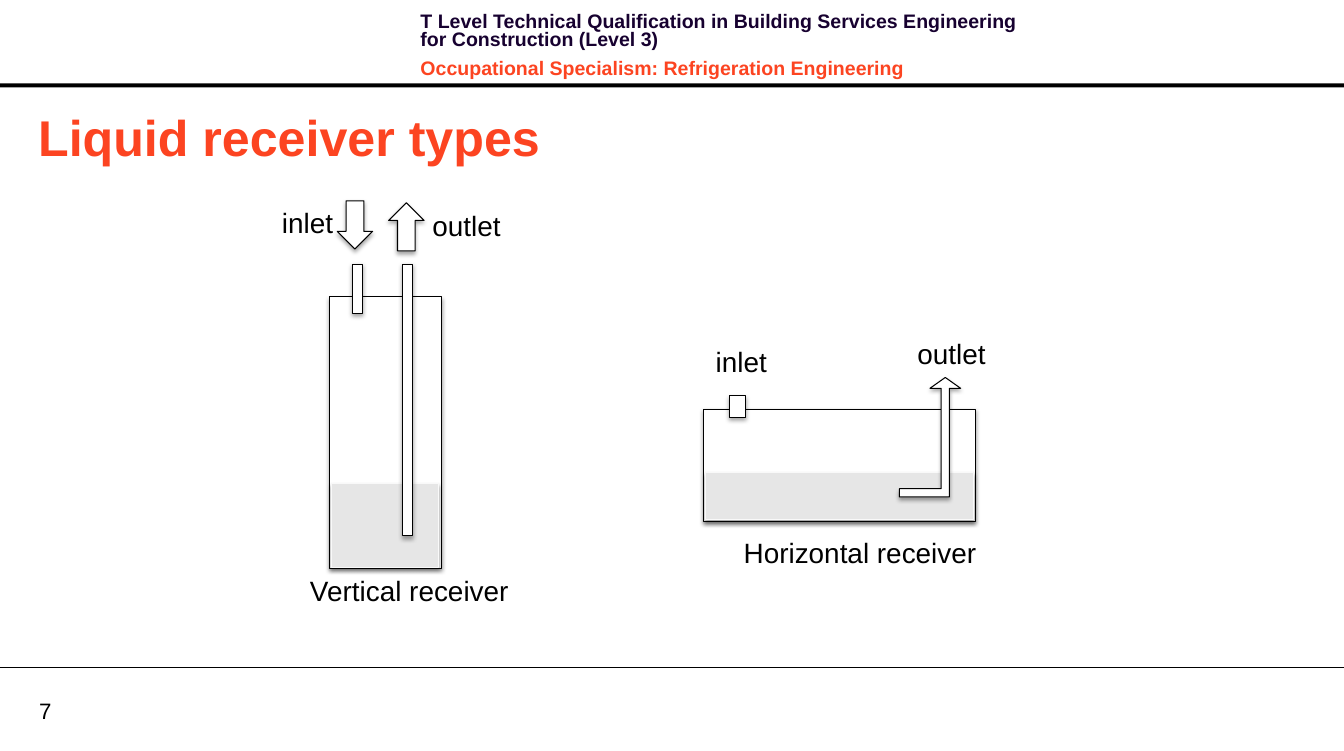
from dataclasses import dataclass

from lxml import etree
from pptx import Presentation
from pptx.dml.color import RGBColor
from pptx.enum.shapes import MSO_CONNECTOR, MSO_SHAPE
from pptx.enum.text import MSO_ANCHOR, PP_ALIGN
from pptx.oxml.ns import qn
from pptx.util import Pt

RECTANGLE = MSO_SHAPE.RECTANGLE
DOWN_ARROW = MSO_SHAPE.DOWN_ARROW
UP_ARROW = MSO_SHAPE.UP_ARROW
BENT_UP_ARROW = MSO_SHAPE.BENT_UP_ARROW
STRAIGHT = MSO_CONNECTOR.STRAIGHT
MIDDLE = MSO_ANCHOR.MIDDLE
LEFT = PP_ALIGN.LEFT

FONT = "Arial"
BLACK, WHITE = "000000", "FFFFFF"
NAVY, ORANGE = "170130", "FC4421"
LIQUID, LIQUID_EDGE = "E6E6E6", "F9F9F9"
PAGE_WIDTH, PAGE_HEIGHT = 964, 538.6


@dataclass
class Part:
    left: float
    top: float
    width: float
    height: float
    kind: int = RECTANGLE
    fill: str = WHITE
    edge: str = BLACK
    adjustments: tuple = ()


@dataclass
class Label:
    text: str
    left: float
    top: float
    width: float


VERTICAL_RECEIVER = [
    Part(236.2, 212.6, 80.6, 195),
    Part(237.6, 347, 77, 59.8, fill=LIQUID, edge=LIQUID_EDGE),
    Part(288.7, 189.4, 7.2, 195),
    Part(252.7, 189.4, 7.2, 35.3),
    Part(241.9, 144, 25.4, 34.6, DOWN_ARROW),
    Part(278.8, 145.4, 25.4, 34.6, UP_ARROW),
]
HORIZONTAL_RECEIVER = [
    Part(504.6, 293.5, 195, 80.6),
    Part(506.2, 339.1, 192.2, 33.8, fill=LIQUID, edge=LIQUID_EDGE),
    Part(523.4, 283.7, 11.5, 15.8),
    Part(645.1, 270.7, 43.9, 85.7, BENT_UP_ARROW, adjustments=(0.135, 0.25, 0.177)),
]
LABELS = [
    Label("inlet", 195.1, 144, 51.8),
    Label("outlet", 303.1, 146.2, 66.2),
    Label("Vertical receiver", 215.3, 408.2, 158.4),
    Label("inlet", 506.2, 243.4, 51.8),
    Label("outlet", 650.9, 237.6, 66.2),
    Label("Horizontal receiver", 526.3, 380.9, 187.2),
]


def colour(hex_text: str) -> RGBColor:
    return RGBColor.from_string(hex_text)


def style(paragraph, size: float, hex_text: str, bold: bool = False) -> None:
    for span in paragraph.runs:
        span.font.name = FONT
        span.font.size = Pt(size)
        span.font.bold = bold
        span.font.color.rgb = colour(hex_text)


def add_effects(shape, shadow: bool) -> None:
    """Give the shape a soft shadow below it, or an empty effect list."""
    effects = etree.SubElement(shape._element.spPr, qn("a:effectLst"))
    if shadow:
        outer = etree.SubElement(
            effects, qn("a:outerShdw"), blurRad=str(Pt(3.1)), dist=str(Pt(1.8)),
            dir="5400000", rotWithShape="0")
        tint = etree.SubElement(outer, qn("a:srgbClr"), val=BLACK)
        etree.SubElement(tint, qn("a:alpha"), val="35000")


def add_part(page, part: Part) -> None:
    shape = page.shapes.add_shape(
        part.kind, Pt(part.left), Pt(part.top), Pt(part.width), Pt(part.height))
    for index, value in enumerate(part.adjustments):
        shape.adjustments[index] = value
    shape.fill.solid()
    shape.fill.fore_color.rgb = colour(part.fill)
    shape.line.color.rgb = colour(part.edge)
    shape.line.width = Pt(0.75)
    add_effects(shape, shadow=True)


def add_text(page, text: str, left: float, top: float, width: float, height: float):
    box = page.shapes.add_textbox(Pt(left), Pt(top), Pt(width), Pt(height))
    box.text_frame.text = text
    return box.text_frame


def add_label(page, label: Label) -> None:
    frame = add_text(page, label.text, label.left, label.top, label.width, 31.7)
    frame.word_wrap = False
    style(frame.paragraphs[0], 20, BLACK)


def add_header(page) -> None:
    bar = page.shapes.add_shape(RECTANGLE, 0, Pt(59.8), Pt(PAGE_WIDTH), Pt(2.9))
    bar.shadow.inherit = False
    bar.fill.solid()
    bar.fill.fore_color.rgb = colour(BLACK)
    bar.line.fill.background()

    frame = add_text(
        page,
        "T Level Technical Qualification in Building Services Engineering "
        "for Construction (Level 3)\n"
        "Occupational Specialism: Refrigeration Engineering",
        294.5, 6.5, 452.9, 46.1)
    frame.word_wrap = True
    course, specialism = frame.paragraphs
    for paragraph, hex_text in ((course, NAVY), (specialism, ORANGE)):
        paragraph.line_spacing = Pt(13.1)
        paragraph.space_after = Pt(4)
        style(paragraph, 14, hex_text, bold=True)
    specialism.space_before = Pt(4)


def add_footer(page) -> None:
    rule = page.shapes.add_connector(STRAIGHT, 0, Pt(478.8), Pt(PAGE_WIDTH), Pt(478.8))
    rule.line.color.rgb = colour(BLACK)
    rule.line.width = Pt(0.75)
    add_effects(rule, shadow=False)

    frame = add_text(page, "7", 28.1, 499.7, 46.1, 19.4)
    frame.margin_left = frame.margin_right = 0
    frame.margin_top = frame.margin_bottom = 0
    frame.vertical_anchor = MIDDLE
    style(frame.paragraphs[0], 16, BLACK)


def set_title(page) -> None:
    title = page.shapes.title
    title.left, title.top = Pt(20.2), Pt(77.8)
    title.width, title.height = Pt(915.8), Pt(46.1)
    title.text_frame.text = "Liquid receiver types"
    title.text_frame.vertical_anchor = MIDDLE
    heading = title.text_frame.paragraphs[0]
    heading.alignment = LEFT
    heading.line_spacing = 0.9
    style(heading, 36, ORANGE, bold=True)


def main() -> None:
    deck = Presentation()
    deck.slide_width, deck.slide_height = Pt(PAGE_WIDTH), Pt(PAGE_HEIGHT)
    page = deck.slides.add_slide(deck.slide_layouts.get_by_name("Title Only"))
    add_header(page)
    add_footer(page)
    set_title(page)
    for part in VERTICAL_RECEIVER + HORIZONTAL_RECEIVER:
        add_part(page, part)
    for label in LABELS:
        add_label(page, label)
    deck.save("out.pptx")


if __name__ == "__main__":
    main()
